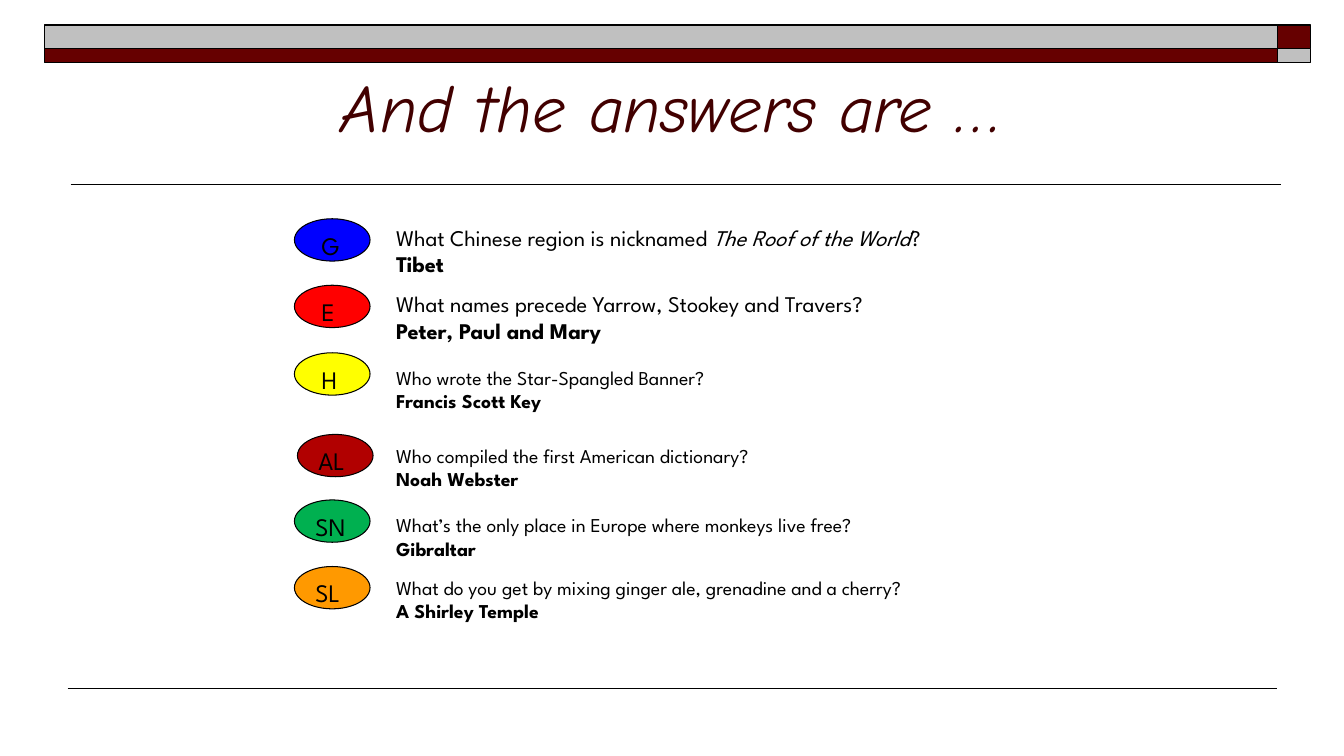
from pptx import Presentation
from pptx.dml.color import RGBColor as Rgb
from pptx.enum.shapes import MSO_CONNECTOR as Conn, MSO_SHAPE as Kind
from pptx.enum.text import MSO_ANCHOR as Anchor, PP_ALIGN as Align
from pptx.oxml.ns import qn
from pptx.util import Inches, Pt
from lxml.etree import SubElement

TITLE = "And the answers are …"

# badge, fill, badge left, badge top, text top, size, question runs, answer
ROWS = [
    ("G", "0000FF", 2.92, 2.17, 2.17, "large",
     [("What Chinese region is nicknamed ", {}),
      ("The Roof of the World", {"italic": True}), ("?", {})], "Tibet"),
    ("E", "FF0000", 2.92, 2.83, 2.83, "large",
     [("What names precede Yarrow, Stookey and Travers?", {})],
     "Peter, Paul and Mary"),
    ("H", "FFFF00", 2.92, 3.5, 3.58, "small",
     [("Who wrote the Star-Spangled Banner?", {})], "Francis Scott Key"),
    ("AL", "B10000", 2.95, 4.31, 4.35, "small",
     [("Who compiled the first American dictionary?", {})], "Noah Webster"),
    ("SN", "00B050", 2.92, 4.96, 5.04, "small",
     [("What’s the only place in Europe where monkeys live free?", {})],
     "Gibraltar"),
    ("SL", "FF9900", 2.92, 5.62, 5.66, "small",
     [("What do you get by mixing ginger ale, grenadine and a cherry?", {})],
     "A Shirley Temple"),
]

THEME = {
    "ink": "000000", "title": "420000", "dark": "660000", "gray": "C0C0C0",
    "head": "Comic Neue", "body": "League Spartan",
    "sizes": {"title": 48, "badge": 18, "large": 16, "small": 14},
}
HIGH = {"large": 0.64, "small": 0.57}
COLS = [(0.44, 12.23), (12.67, 0.33)]
BANDS = [(0.25, 0.23, ("gray", "dark")), (0.48, 0.14, ("dark", "gray"))]
RULES = [(0.7, 12.71, 1.83, 1), (0.67, 12.67, 6.83, 0.75)]


def add_text(frame, paras, size, font=THEME["body"], color=THEME["ink"],
             align=Align.LEFT, anchor=Anchor.TOP):
    frame.word_wrap = True
    frame.vertical_anchor = anchor
    for i, runs in enumerate(paras):
        para = frame.paragraphs[0] if i == 0 else frame.add_paragraph()
        para.alignment = align
        for text, style in runs:
            run = para.add_run()
            run.text = text
            run.font.name = font
            run.font.size = Pt(THEME["sizes"][size])
            run.font.color.rgb = Rgb.from_string(color)
            run.font.bold = style.get("bold", False)
            run.font.italic = style.get("italic", False)


def add_box(slide, x, y, w, h):
    return slide.shapes.add_textbox(
        Inches(x), Inches(y), Inches(w), Inches(h)).text_frame


def add_form(slide, kind, x, y, w, h, fill, width):
    form = slide.shapes.add_shape(
        kind, Inches(x), Inches(y), Inches(w), Inches(h))
    form.shadow.inherit = False
    form.fill.solid()
    form.fill.fore_color.rgb = Rgb.from_string(fill)
    form.line.color.rgb = Rgb.from_string(THEME["ink"])
    form.line.width = Pt(width)
    return form


def add_rule(slide, left, right, y, width):
    rule = slide.shapes.add_connector(
        Conn.STRAIGHT, Inches(left), Inches(y), Inches(right), Inches(y))
    rule.line.color.rgb = Rgb.from_string(THEME["ink"])
    rule.line.width = Pt(width)
    SubElement(rule._element.spPr, qn("a:effectLst"))


def add_row(slide, row):
    badge, fill, x, y, top, size, ask, reply = row
    oval = add_form(slide, Kind.OVAL, x, y, 0.75, 0.42, fill, 0.75)
    frame = oval.text_frame
    frame.margin_left = Inches(0.16 if len(badge) == 1 else 0.1)
    frame.margin_right = 0
    add_text(frame, [[(badge, {})]], "badge")
    add_text(add_box(slide, 3.83, top, 7.17, HIGH[size]),
             [ask, [(reply, {"bold": True})]], size)


def main():
    deck = Presentation()
    deck.slide_width, deck.slide_height = Inches(13.33), Inches(7.5)
    slide = deck.slides.add_slide(deck.slide_layouts[6])
    for y, h, fills in BANDS:
        for (x, w), fill in zip(COLS, fills):
            add_form(slide, Kind.RECTANGLE, x, y, w, h, THEME[fill], 1)
    for rule in RULES:
        add_rule(slide, *rule)
    add_text(add_box(slide, 2.17, 0.25, 9, 1.25),
             [[(TITLE, {"italic": True})]], "title", font=THEME["head"],
             color=THEME["title"], align=Align.CENTER, anchor=Anchor.BOTTOM)
    for row in ROWS:
        add_row(slide, row)
    deck.save("out.pptx")


if __name__ == "__main__":
    main()
